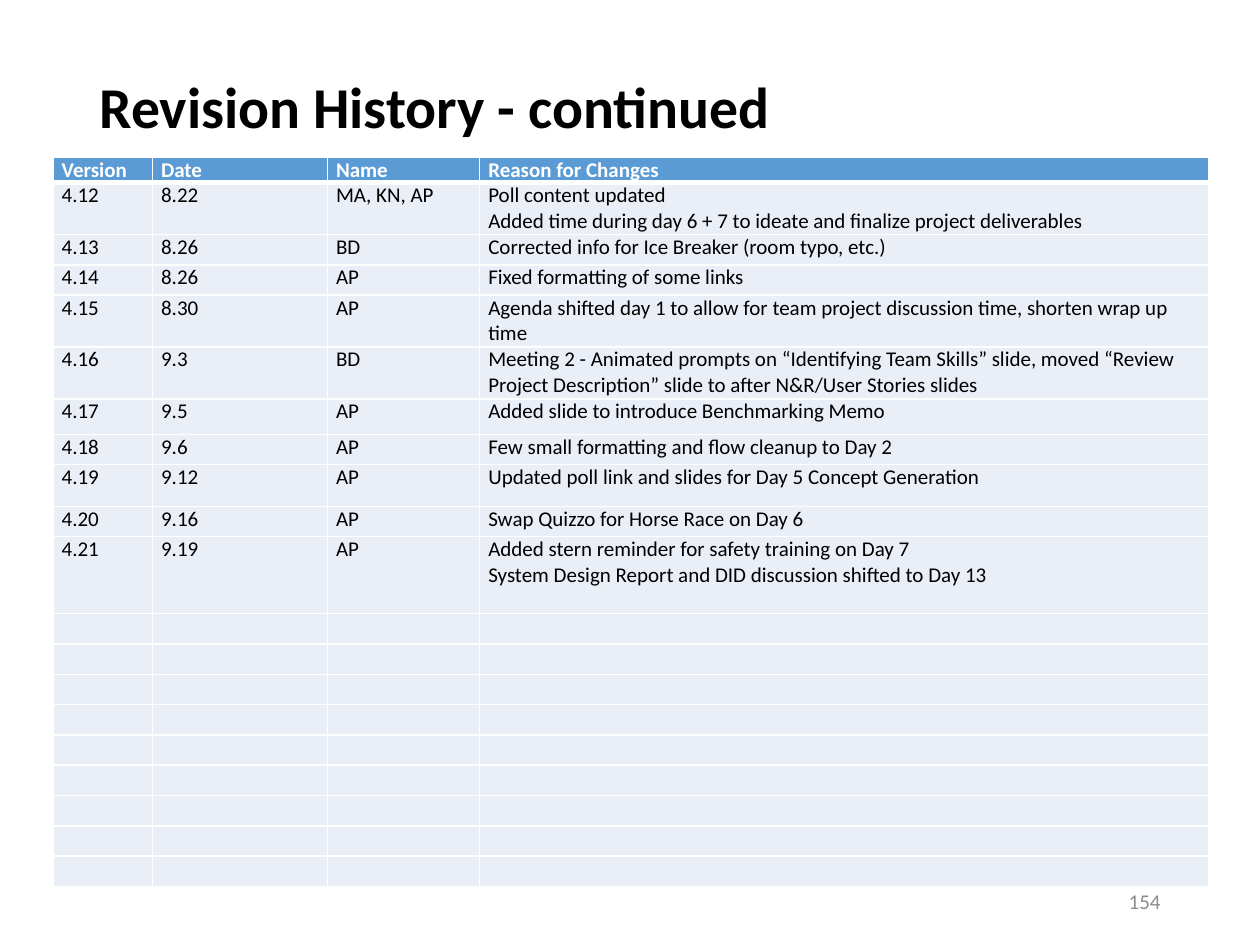
from dataclasses import dataclass

from lxml.etree import SubElement
from pptx import Presentation
from pptx.dml.color import RGBColor as Rgb
from pptx.enum.text import MSO_ANCHOR as Anchor, PP_ALIGN as Align
from pptx.oxml.ns import qn
from pptx.util import Inches, Pt


@dataclass(frozen=True)
class Theme:
    font: str = "Calibri"
    title_size: int = 33
    body_size: int = 12
    ink: str = "000000"
    muted: str = "8C8C8C"
    paper: str = "FFFFFF"
    header: str = "5B9BD5"
    band: str = "EAEFF7"


THEME = Theme()
WIDTH, HEIGHT = 10, 7.5

# Regions: left, top, width, height in inches
TITLE_BOX = (0.69, 0.4, 8.62, 1.45)
TABLE_BOX = (0.42, 1.25, 9.17, 5.79)
NUMBER_BOX = (7.06, 6.95, 2.25, 0.4)

COLUMN_SHARES = (0.79, 1.39, 1.21, 5.79)
HEADER_ROW, PLAIN_ROW, TWO_LINES = 0.2, 0.24, 0.41
EMPTY_ROWS = 9

HEADINGS = ("Version", "Date", "Name", "Reason for Changes")
REVISIONS = (
    (TWO_LINES, "4.12", "8.22", "MA, KN, AP",
     "Poll content updated\n"
     "Added time during day 6 + 7 to ideate and finalize project deliverables"),
    (PLAIN_ROW, "4.13", "8.26", "BD", "Corrected info for Ice Breaker (room typo, etc.)"),
    (PLAIN_ROW, "4.14", "8.26", "AP", "Fixed formatting of some links"),
    (TWO_LINES, "4.15", "8.30", "AP",
     "Agenda shifted day 1 to allow for team project discussion time, shorten wrap up time"),
    (TWO_LINES, "4.16", "9.3", "BD",
     "Meeting 2 - Animated prompts on “Identifying Team Skills” slide, moved "
     "“Review Project Description” slide to after N&R/User Stories slides"),
    (0.28, "4.17", "9.5", "AP", "Added slide to introduce Benchmarking Memo"),
    (PLAIN_ROW, "4.18", "9.6", "AP", "Few small formatting and flow cleanup to Day 2"),
    (0.33, "4.19", "9.12", "AP", "Updated poll link and slides for Day 5 Concept Generation"),
    (PLAIN_ROW, "4.20", "9.16", "AP", "Swap Quizzo for Horse Race on Day 6"),
    (0.61, "4.21", "9.19", "AP",
     "Added stern reminder for safety training on Day 7\n"
     "System Design Report and DID discussion shifted to Day 13"),
)


def style_text(frame, size, color, bold=False):
    for para in frame.paragraphs:
        for span in para.runs:
            span.font.name = THEME.font
            span.font.size = Pt(size)
            span.font.bold = bold
            span.font.color.rgb = Rgb.from_string(color)


def add_text(page, box, text, size, color, bold=False):
    frame = page.shapes.add_textbox(*map(Inches, box)).text_frame
    frame.word_wrap = True
    frame.vertical_anchor = Anchor.MIDDLE
    frame.text = text
    style_text(frame, size, color, bold)
    return frame


def add_title(page, box):
    frame = add_text(page, box, "Revision History - continued",
                     THEME.title_size, THEME.ink, bold=True)
    frame.margin_bottom = Inches(0.55)
    frame.paragraphs[0].line_spacing = 0.9


def add_page_number(page, box):
    frame = add_text(page, box, "154", THEME.body_size, THEME.muted)
    frame.paragraphs[0].alignment = Align.RIGHT


def set_borders(cell, **widths):
    """Draw the cell's sides, each given as L, R, T or B with a width in points."""
    properties = cell._tc.get_or_add_tcPr()
    for position, (side, width) in enumerate(widths.items()):
        line = properties.makeelement(qn(f"a:ln{side}"), {"w": str(Pt(width))})
        fill = SubElement(line, qn("a:solidFill"))
        SubElement(fill, qn("a:srgbClr"), val=THEME.paper)
        properties.insert(position, line)


def fill_cell(cell, text, is_header, top_line, bottom_line):
    cell.margin_left = cell.margin_right = Inches(0.07)
    cell.margin_top = cell.margin_bottom = 0
    cell.fill.solid()
    cell.fill.fore_color.rgb = Rgb.from_string(THEME.header if is_header else THEME.band)
    set_borders(cell, L=1, R=1, T=top_line, B=bottom_line)
    if text:
        cell.text_frame.text = text
        style_text(cell.text_frame, THEME.body_size,
                   THEME.paper if is_header else THEME.ink, is_header)
    else:
        # An empty cell keeps its row low only through its end mark
        SubElement(cell.text_frame.paragraphs[0]._p, qn("a:endParaRPr"),
                   sz=str(THEME.body_size * 100))


def add_revision_table(page, box):
    empty = (PLAIN_ROW, *[""] * len(HEADINGS))
    rows = [(HEADER_ROW, *HEADINGS), *REVISIONS, *[empty] * EMPTY_ROWS]
    table = page.shapes.add_table(len(rows), len(HEADINGS), *map(Inches, box)).table
    table.horz_banding = False
    for column, share in zip(table.columns, COLUMN_SHARES):
        column.width = Inches(box[2] * share / sum(COLUMN_SHARES))
    row_scale = box[3] / sum(row[0] for row in rows)
    for index, (height, *texts) in enumerate(rows):
        table.rows[index].height = Inches(height * row_scale)
        for column, text in enumerate(texts):
            fill_cell(table.cell(index, column), text, is_header=index == 0,
                      top_line=3 if index == 1 else 1,
                      bottom_line=3 if index == 0 else 1)


def main():
    deck = Presentation()
    deck.slide_width, deck.slide_height = Inches(WIDTH), Inches(HEIGHT)
    page = deck.slides.add_slide(deck.slide_layouts[6])
    add_title(page, TITLE_BOX)
    add_revision_table(page, TABLE_BOX)
    add_page_number(page, NUMBER_BOX)
    deck.save("out.pptx")


if __name__ == "__main__":
    main()
